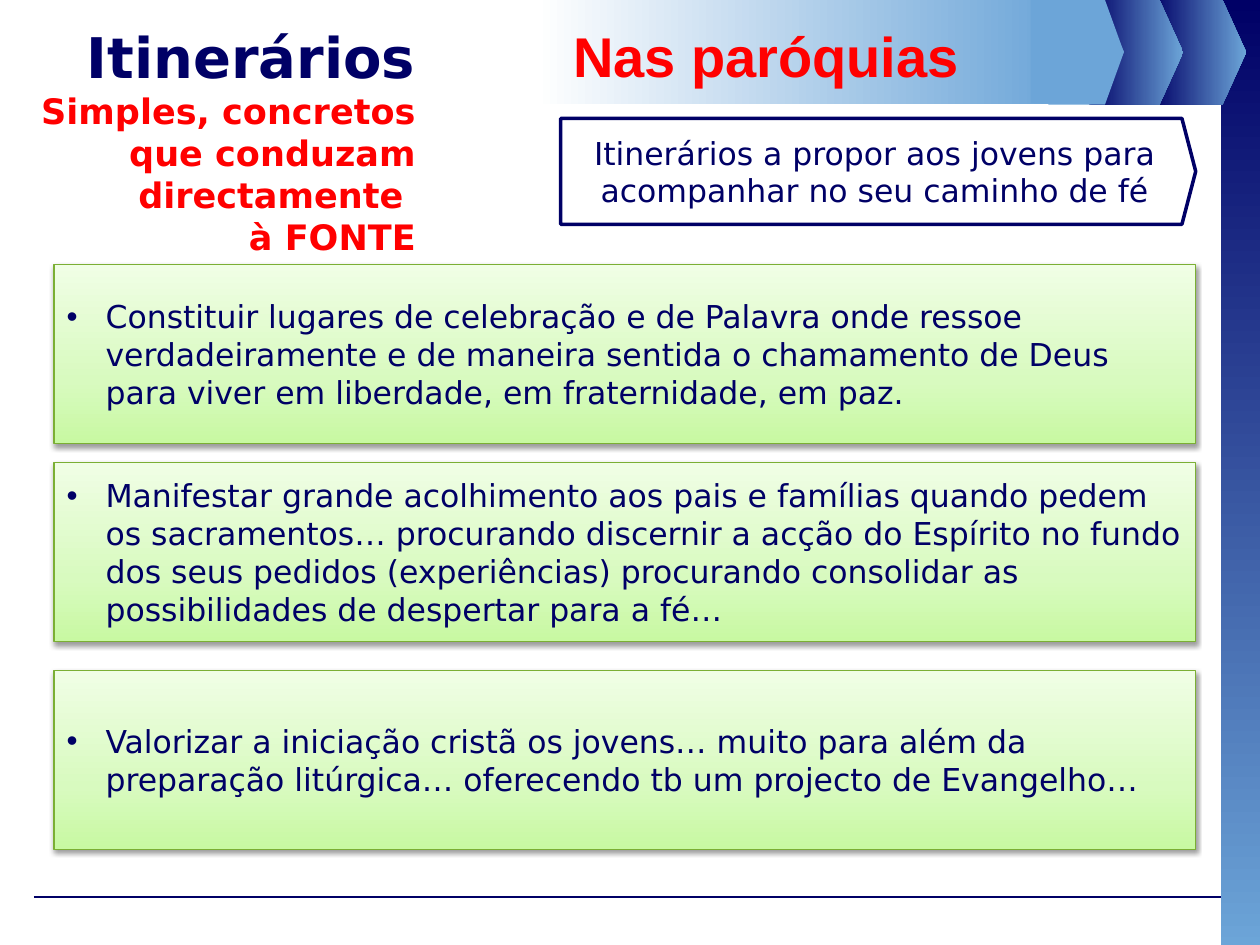
"""Build the slide on faith itineraries for young people in parishes."""
from dataclasses import dataclass

from lxml import etree
from pptx import Presentation
from pptx.dml.color import RGBColor
from pptx.enum import shapes, text
from pptx.oxml import ns
from pptx.util import Inches, Pt

NAVY, SKY, RED, WHITE = "000066", "6CA5D8", "FF0000", "FFFFFF"
BLUE_FADE = ((0, NAVY), (100, SKY))
WHITE_FADE = ((0, WHITE), (100, SKY))
GREEN_FADE = ((0, "C8F9A2"), (35, "D8FABF"), (100, "F0FEE5"))
RECTANGLE = shapes.MSO_SHAPE.RECTANGLE
PENTAGON = shapes.MSO_SHAPE.PENTAGON
BODY = {"name": "DejaVu Sans", "size": Pt(18), "bold": False}
SUBHEAD = {"name": "DejaVu Sans", "size": Pt(20), "bold": True}
HEAD = {"name": "DejaVu Sans", "size": Pt(32), "bold": True}
SECTION = {"name": "Arial", "size": Pt(32), "bold": True}


@dataclass
class Panel:
    """A filled outline with its place, colours and border."""
    left: float
    top: float
    width: float
    height: float
    kind: int = RECTANGLE
    fill: str | tuple = SKY
    angle: int = 0
    point: float = 0.25
    line: str = ""
    weight: float = 0.75


DECORATION = (
    Panel(9.69, 0, 0.31, 7.53, fill=BLUE_FADE, angle=270),
    Panel(9.14, 0, 0.75, 0.83, PENTAGON, BLUE_FADE),
    Panel(8.64, 0, 0.75, 0.83, PENTAGON, BLUE_FADE),
    Panel(8.32, 0, 0.6, 0.83, PENTAGON),
    Panel(4.25, 0, 4.18, 0.83, fill=WHITE_FADE),
    Panel(8.18, 0, 0.74, 0.82, PENTAGON),
)
PROPOSALS = (
    (2.1, "Constituir lugares de celebração e de Palavra onde ressoe verdadeiramente e de "
          "maneira sentida o chamamento de Deus para viver em liberdade, em fraternidade, em paz."),
    (3.67, "Manifestar grande acolhimento aos pais e famílias quando pedem os sacramentos… "
           "procurando discernir a acção do Espírito no fundo dos seus pedidos (experiências) "
           "procurando consolidar as possibilidades de despertar para a fé…"),
    (5.32, "Valorizar a iniciação cristã os jovens… muito para além da preparação litúrgica… "
           "oferecendo tb um projecto de Evangelho…"),
)


def color(value: str) -> RGBColor:
    """Turn a hex string into a colour."""
    return RGBColor.from_string(value)


def add_element(parent, tag: str, **attributes: str):
    """Append a drawing element to a parent."""
    return etree.SubElement(parent, ns.qn(tag), attributes)


def set_gradient(shape, stops: tuple, angle: int) -> None:
    """Fill a shape with a linear gradient at a counter-clockwise angle."""
    shape.fill.gradient()
    shape.fill.gradient_angle = angle
    stop_list = shape._element.spPr.find(".//" + ns.qn("a:gsLst"))
    for stop in list(stop_list):
        stop_list.remove(stop)
    for position, value in stops:
        stop = add_element(stop_list, "a:gs", pos=str(position * 1000))
        add_element(stop, "a:srgbClr", val=value)


def add_panel(slide, panel: Panel):
    """Draw one panel and return its shape."""
    box = map(Inches, (panel.left, panel.top, panel.width, panel.height))
    shape = slide.shapes.add_shape(panel.kind, *box)
    shape.shadow.inherit = False
    if panel.kind == PENTAGON:
        shape.adjustments[0] = panel.point
    if isinstance(panel.fill, tuple):
        set_gradient(shape, panel.fill, panel.angle)
    else:
        shape.fill.solid()
        shape.fill.fore_color.rgb = color(panel.fill)
    if panel.line:
        shape.line.color.rgb = color(panel.line)
        shape.line.width = Pt(panel.weight)
    else:
        shape.line.fill.background()
    return shape


def add_shadow(shape) -> None:
    """Give a shape a soft shadow below it."""
    effects = shape._element.spPr.find(ns.qn("a:effectLst"))
    shadow = add_element(effects, "a:outerShdw", blurRad=str(Pt(3.1)), dist=str(Pt(1.6)),
                         dir="5400000", rotWithShape="0")
    black = add_element(shadow, "a:srgbClr", val="000000")
    add_element(black, "a:alpha", val="38000")


def add_run(paragraph, words: str, format_values: dict, value: str) -> None:
    """Append formatted words to a paragraph."""
    run = paragraph.add_run()
    run.text = words
    for name, setting in format_values.items():
        setattr(run.font, name, setting)
    run.font.color.rgb = color(value)


def prepare_text(shape, alignment, anchor=text.MSO_ANCHOR.MIDDLE):
    """Set wrapping and alignment, and return the first paragraph."""
    frame = shape.text_frame
    values = {"word_wrap": True, "auto_size": text.MSO_AUTO_SIZE.NONE, "vertical_anchor": anchor}
    for name, setting in values.items():
        setattr(frame, name, setting)
    paragraph = frame.paragraphs[0]
    paragraph.alignment = alignment
    return paragraph


def add_proposal(slide, top: float, words: str) -> None:
    """Draw a green box holding one bulleted proposal."""
    shape = add_panel(slide, Panel(0.43, top, 9.06, 1.42, fill=GREEN_FADE, angle=90, line="7BAF34"))
    add_shadow(shape)
    paragraph = prepare_text(shape, text.PP_ALIGN.LEFT)
    properties = paragraph._p.get_or_add_pPr()
    properties.set("marL", str(Inches(0.31)))
    properties.set("indent", str(Inches(-0.31)))
    add_element(properties, "a:buFont", typeface="Arial")
    add_element(properties, "a:buChar", char="•")
    add_run(paragraph, words, BODY, NAVY)


def add_rule(slide) -> None:
    """Draw the thin line along the foot of the slide."""
    ends = map(Inches, (0.27, 7.12, 9.69, 7.12))
    rule = slide.shapes.add_connector(shapes.MSO_CONNECTOR.STRAIGHT, *ends)
    rule.line.color.rgb = color(NAVY)
    rule.line.width = Pt(0.75)
    add_element(rule._element.spPr, "a:effectLst")


def add_title(slide) -> None:
    """Place and fill the title."""
    title = slide.shapes.title
    place = {"left": -0.04, "top": -0.03, "width": 3.44, "height": 2.28}
    for name, length in place.items():
        setattr(title, name, Inches(length))
    paragraph = prepare_text(title, text.PP_ALIGN.RIGHT)
    add_run(paragraph, "Itinerários", HEAD, NAVY)
    paragraph.add_line_break()
    add_run(paragraph, "Simples, concretos que conduzam directamente ", SUBHEAD, RED)
    paragraph.add_line_break()
    add_run(paragraph, "à FONTE", SUBHEAD, RED)


def main() -> None:
    """Build and save the presentation."""
    presentation = Presentation()
    presentation.slide_width, presentation.slide_height = Inches(10), Inches(7.5)
    slide = presentation.slides.add_slide(presentation.slide_layouts[5])
    add_rule(slide)
    for panel in DECORATION:
        add_panel(slide, panel)
    add_title(slide)
    banner = add_panel(slide, Panel(4.45, 0.94, 5.04, 0.84, PENTAGON, WHITE,
                                    point=0.13, line=NAVY, weight=2))
    add_run(prepare_text(banner, text.PP_ALIGN.CENTER),
            "Itinerários a propor aos jovens para acompanhar no seu caminho de fé", BODY, NAVY)
    section = slide.shapes.add_textbox(*map(Inches, (4.45, 0.12, 4.49, 0.64)))
    add_run(prepare_text(section, text.PP_ALIGN.LEFT, text.MSO_ANCHOR.TOP),
            "Nas paróquias", SECTION, RED)
    for top, words in PROPOSALS:
        add_proposal(slide, top, words)
    presentation.save("out.pptx")


if __name__ == "__main__":
    main()
